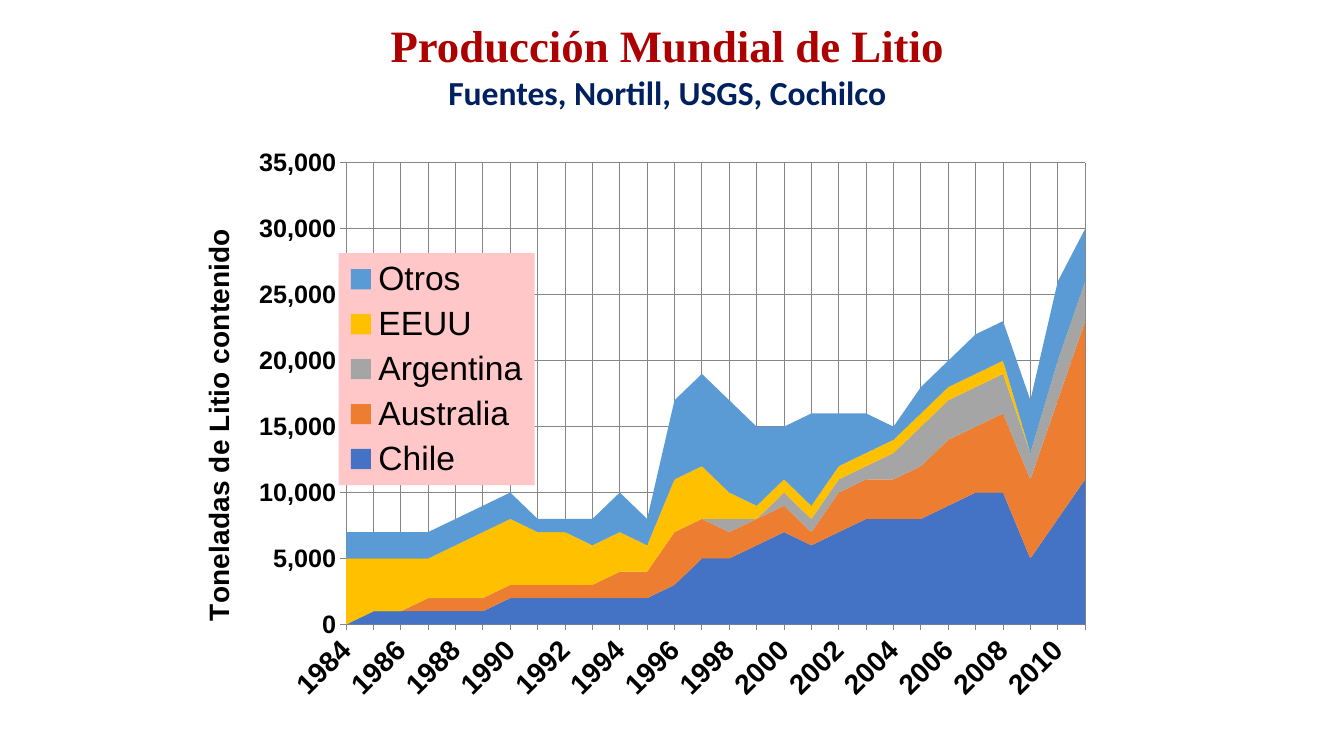
from lxml.etree import SubElement
from pptx import Presentation
from pptx.chart.data import CategoryChartData
from pptx.dml.color import RGBColor
from pptx.enum.chart import XL_CHART_TYPE as ChartType, XL_LEGEND_POSITION as LegendPosition
from pptx.enum.chart import XL_TICK_MARK as TickMark
from pptx.enum.text import MSO_ANCHOR as Anchor, MSO_AUTO_SIZE as AutoSize, PP_ALIGN as Align
from pptx.oxml.ns import qn
from pptx.util import Inches, Pt

RED = RGBColor(0xAD, 0x00, 0x00)
NAVY = RGBColor(0x00, 0x20, 0x60)
BLACK = RGBColor(0x00, 0x00, 0x00)
GRID = RGBColor(0x86, 0x86, 0x86)
PINK = RGBColor(0xFF, 0xC7, 0xC7)
BLUE = RGBColor(0x44, 0x72, 0xC4)
ORANGE = RGBColor(0xED, 0x7D, 0x31)
GRAY = RGBColor(0xA5, 0xA5, 0xA5)
GOLD = RGBColor(0xFF, 0xC0, 0x00)
SKY = RGBColor(0x5B, 0x9B, 0xD5)

YEARS = [str(year) for year in range(1984, 2012)]
THOUSAND_TONS = [
    ("Chile", BLUE, [0, 1, 1, 1, 1, 1, 2, 2, 2, 2, 2, 2, 3, 5,
                     5, 6, 7, 6, 7, 8, 8, 8, 9, 10, 10, 5, 8, 11]),
    ("Australia", ORANGE, [0, 0, 0, 1, 1, 1, 1, 1, 1, 1, 2, 2, 4, 3,
                           2, 2, 2, 1, 3, 3, 3, 4, 5, 5, 6, 6, 9, 12]),
    ("Argentina", GRAY, [0] * 14 + [1, 0, 1, 1, 1, 1, 2, 3, 3, 3, 3, 2, 3, 3]),
    ("EEUU", GOLD, [5, 4, 4, 3, 4, 5, 5, 4, 4, 3, 3, 2, 4, 4,
                    2, 1, 1, 1, 1, 1, 1, 1, 1, 1, 1, 0, 0, 0]),
    ("Otros", SKY, [2, 2, 2, 2, 2, 2, 2, 1, 1, 2, 3, 2, 6, 7,
                    7, 6, 4, 7, 4, 3, 1, 2, 2, 3, 3, 4, 6, 4]),
]


def set_font(font, size, bold, color=BLACK, name="Arial"):
    """Apply size, weight, colour and typeface to a font."""
    font.size, font.bold, font.name = Pt(size), bold, name
    font.color.rgb = color


def add_heading(page, left, top, width, height):
    """Fill the title placeholder with the heading and its sources."""
    title = page.shapes.title
    title.left, title.top, title.width, title.height = map(Inches, (left, top, width, height))
    frame = title.text_frame
    frame.word_wrap, frame.auto_size = True, AutoSize.NONE
    frame.vertical_anchor = Anchor.TOP
    lines = [("Producción Mundial de Litio", 32, RED, "Times New Roman"),
             ("Fuentes, Nortill, USGS, Cochilco", 24, NAVY, "Calibri")]
    for index, (words, size, color, name) in enumerate(lines):
        para = frame.add_paragraph() if index else frame.paragraphs[0]
        para.alignment = Align.CENTER
        para.space_before = Pt(0)
        span = para.add_run()
        span.text = words
        set_font(span.font, size, True, color, name)


def make_layout(parent, x, y, w, h, inner=False):
    """Return a manual chart layout given in fractions of the chart."""
    layout = SubElement(parent, qn("c:layout"))
    manual = SubElement(layout, qn("c:manualLayout"))
    settings = [("layoutTarget", "inner")] if inner else []
    settings += [("xMode", "edge"), ("yMode", "edge"), ("x", x), ("y", y), ("w", w), ("h", h)]
    for tag, value in settings:
        SubElement(manual, qn("c:" + tag)).set("val", str(value))
    return layout


def format_axis(axis, size):
    """Style the labels, ticks, line and grid of an axis."""
    set_font(axis.tick_labels.font, size, True)
    axis.major_tick_mark, axis.minor_tick_mark = TickMark.OUTSIDE, TickMark.NONE
    axis.has_major_gridlines = True
    for line in (axis.format.line, axis.major_gridlines.format.line):
        line.color.rgb, line.width = GRID, Pt(0.75)


def format_axes(chart):
    """Set up the year axis and the tonnage axis."""
    years, tons = chart.category_axis, chart.value_axis
    format_axis(years, 20)
    format_axis(tons, 18)
    years._element.find(qn("c:txPr")).find(qn("a:bodyPr")).set("rot", "-2700000")
    no_multi = years._element.find(qn("c:noMultiLvlLbl"))
    for tag, step in (("c:tickLblSkip", "2"), ("c:tickMarkSkip", "1")):
        skip = SubElement(years._element, qn(tag))
        skip.set("val", step)
        if no_multi is not None:
            no_multi.addprevious(skip)
    tons.minimum_scale, tons.maximum_scale, tons.major_unit = 0, 35000, 5000
    tons.tick_labels.number_format = "#,##0"
    tons.tick_labels.number_format_is_linked = False
    tons._element.find(qn("c:crossBetween")).set("val", "midCat")
    span = tons.axis_title.text_frame.paragraphs[0].add_run()
    span.text = "Toneladas de Litio contenido"
    set_font(span.font, 20, True)
    body = tons.axis_title.text_frame._txBody.find(qn("a:bodyPr"))
    body.set("rot", "-5400000")
    body.set("vert", "horz")


def format_legend(chart):
    """Place the pink legend over the left of the plot."""
    chart.has_legend = True
    legend = chart.legend
    legend.position, legend.include_in_layout = LegendPosition.RIGHT, True
    set_font(legend.font, 24, False)
    element = legend._element
    for old in element.findall(qn("c:layout")):
        element.remove(old)
    element.find(qn("c:legendPos")).addnext(make_layout(element, 0.154, 0.205, 0.211, 0.383))
    shape = SubElement(element, qn("c:spPr"))
    fill = SubElement(shape, qn("a:solidFill"))
    SubElement(fill, qn("a:srgbClr")).set("val", str(PINK))
    element.find(qn("c:txPr")).addprevious(shape)


def add_production_chart(page, left, top, width, height):
    """Draw the stacked areas of lithium production by country."""
    data = CategoryChartData(number_format="#,##0")
    data.categories = YEARS
    for name, _, values in THOUSAND_TONS:
        data.add_series(name, [value * 1000 for value in values])
    box = map(Inches, (left, top, width, height))
    chart = page.shapes.add_chart(ChartType.AREA_STACKED, *box, data).chart
    chart.has_title = False
    set_font(chart.font, 14, False)
    for series, (_, color, _) in zip(chart.plots[0].series, THOUSAND_TONS):
        series.format.fill.solid()
        series.format.fill.fore_color.rgb = color
        series.format.line.fill.background()
    format_axes(chart)
    format_legend(chart)
    plot_area = chart._chartSpace.chart.plotArea
    for old in plot_area.findall(qn("c:layout")):
        plot_area.remove(old)
    plot_area.insert(0, make_layout(plot_area, 0.162, 0.056, 0.796, 0.762, inner=True))


def main():
    """Build the slide and save the deck."""
    deck = Presentation()
    deck.slide_width, deck.slide_height = Inches(13.33), Inches(7.5)
    page = deck.slides.add_slide(deck.slide_layouts[5])
    add_heading(page, 3.75, 0.13, 5.74, 1.58)
    add_production_chart(page, 1.94, 1.28, 9.21, 6.01)
    deck.save("out.pptx")


if __name__ == "__main__":
    main()
